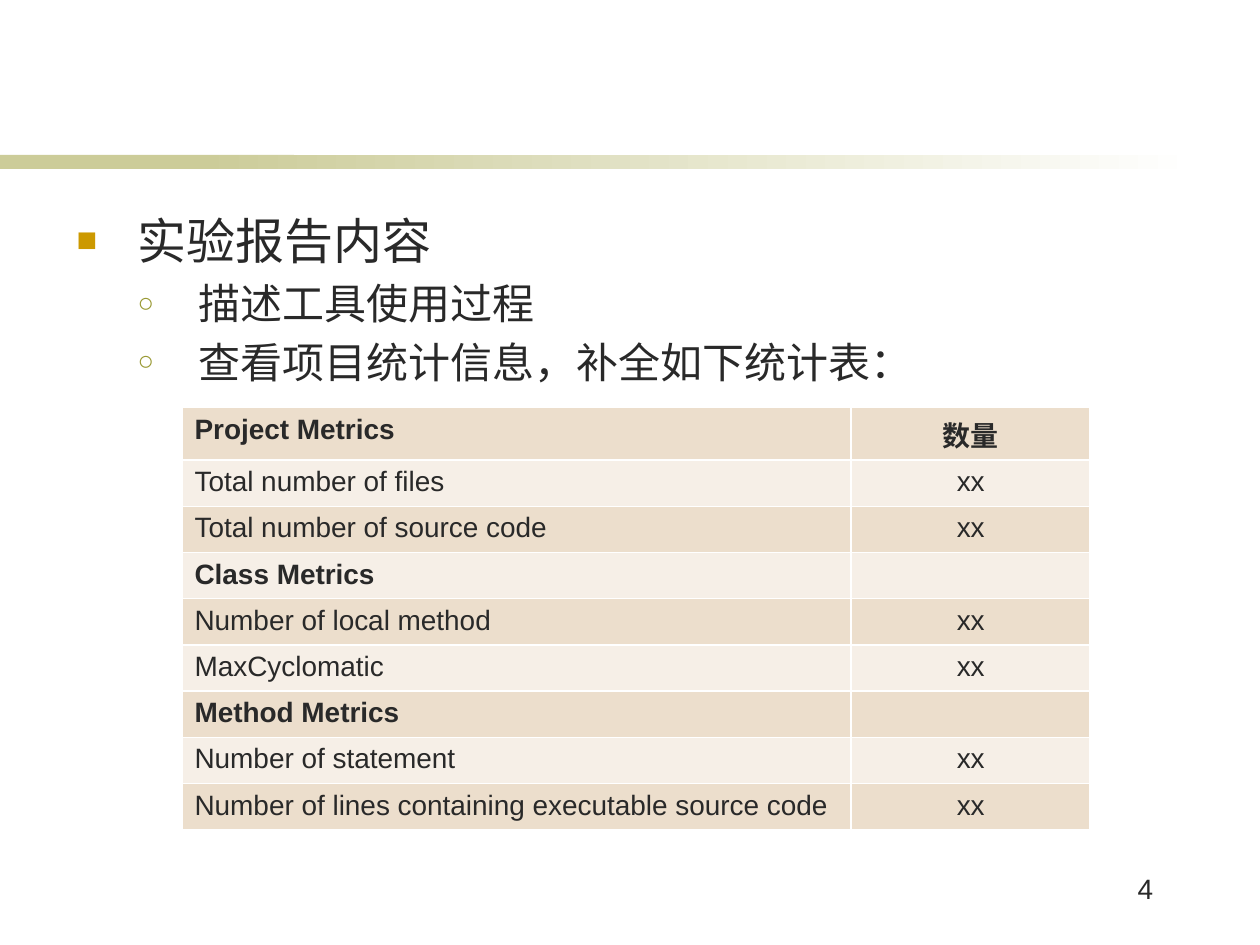
from lxml import etree
from pptx import Presentation
from pptx.dml.color import RGBColor
from pptx.enum import shapes, text
from pptx.oxml import ns
from pptx.util import Pt

INK = RGBColor(0x29, 0x29, 0x29)
WHITE = RGBColor(0xFF, 0xFF, 0xFF)
OLIVE = RGBColor(0xCC, 0xCC, 0x99)
DARK_OLIVE = RGBColor(0x99, 0x99, 0x33)
GOLD = RGBColor(0xCC, 0x99, 0x00)
BANDS = RGBColor(0xEC, 0xDE, 0xCC), RGBColor(0xF6, 0xEF, 0xE7)

LEFT, CENTER, RIGHT = text.PP_ALIGN.LEFT, text.PP_ALIGN.CENTER, text.PP_ALIGN.RIGHT

# text, level, size, bullet, bullet colour, bullet size in percent
OUTLINE = [
    ("实验报告内容", 0, 28, "■", GOLD, 70),
    ("描述工具使用过程", 1, 24, "○", DARK_OLIVE, 65),
    ("查看项目统计信息，补全如下统计表：", 1, 24, "○", DARK_OLIVE, 65),
]
# name, value, bold
METRICS = [
    ("Project Metrics", "数量", True),
    ("Total number of files", "xx", False),
    ("Total number of source code", "xx", False),
    ("Class Metrics", "", True),
    ("Number of local method", "xx", False),
    ("MaxCyclomatic", "xx", False),
    ("Method Metrics", "", True),
    ("Number of statement", "xx", False),
    ("Number of lines containing executable source code", "xx", False),
]


def add(parent, tag, **attrs):
    return etree.SubElement(parent, ns.qn(tag), attrs)


class Deck:
    font = "Arial"

    def __init__(self, slide):
        self.s = slide

    def set_text(self, p, words, size, align=LEFT, bold=False):
        p.text = words
        p.alignment = align
        f = p.font
        f.name, f.size, f.bold = self.font, Pt(size), bold
        f.color.rgb = INK

    def bar(self, x, y, w, h, color, fade_to=None):
        sp = self.s.shapes.add_shape(shapes.MSO_SHAPE.RECTANGLE, Pt(x), Pt(y), Pt(w), Pt(h))
        sp.shadow.inherit = False
        sp.line.fill.background()
        if fade_to is None:
            sp.fill.solid()
            sp.fill.fore_color.rgb = color
        else:
            sp.fill.gradient()
            sp.fill.gradient_angle = 0
            for stop, rgb in zip(sp.fill.gradient_stops, (color, fade_to)):
                stop.color.rgb = rgb

    def box(self, x, y, w, h):
        tf = self.s.shapes.add_textbox(Pt(x), Pt(y), Pt(w), Pt(h)).text_frame
        tf.word_wrap = True
        return tf

    def label(self, x, y, w, h, words, size, align):
        self.set_text(self.box(x, y, w, h).paragraphs[0], words, size, align)

    def outline(self, x, y, w, h, items, indent):
        tf = self.box(x, y, w, h)
        for i, (words, level, size, bullet, color, percent) in enumerate(items):
            p = tf.add_paragraph() if i else tf.paragraphs[0]
            if i:
                p.space_before = Pt(size * 0.2)
            p.level = level
            pPr = p._p.get_or_add_pPr()
            pPr.set("marL", str(Pt(indent * (level + 1))))
            pPr.set("indent", str(Pt(-indent)))
            add(add(pPr, "a:buClr"), "a:srgbClr", val=str(color))
            add(pPr, "a:buSzPct", val=str(percent * 1000))
            add(pPr, "a:buFont", typeface=self.font)
            add(pPr, "a:buChar", char=bullet)
            self.set_text(p, words, size)

    def border(self, cell, color, width):
        tcPr = cell._tc.get_or_add_tcPr()
        for side in ("a:lnL", "a:lnR", "a:lnT", "a:lnB"):
            ln = add(tcPr, side, w=str(Pt(width)))
            add(add(ln, "a:solidFill"), "a:srgbClr", val=str(color))

    def table(self, x, y, widths, heights, rows, size):
        frame = self.s.shapes.add_table(len(rows), len(widths), Pt(x), Pt(y),
                                        Pt(sum(widths)), Pt(sum(heights)))
        tbl = frame.table
        for col, width in zip(tbl.columns, widths):
            col.width = Pt(width)
        for i, (name, value, bold) in enumerate(rows):
            tbl.rows[i].height = Pt(heights[i])
            for cell, words, align in zip(tbl.rows[i].cells, (name, value), (LEFT, CENTER)):
                self.border(cell, WHITE, 1)
                cell.fill.solid()
                cell.fill.fore_color.rgb = BANDS[i % 2]
                if words:
                    self.set_text(cell.text_frame.paragraphs[0], words, size, align, bold)
                else:
                    cell.margin_top = cell.margin_bottom = 0
        # The header's Chinese text sits in the middle of its taller row
        tbl.cell(0, 1).vertical_anchor = text.MSO_ANCHOR.MIDDLE


def main():
    prs = Presentation()
    prs.slide_width, prs.slide_height = Pt(720), Pt(540)
    deck = Deck(prs.slides.add_slide(prs.slide_layouts[6]))
    deck.bar(0, 88.5, 168, 8, OLIVE)
    deck.bar(114, 88.5, 570, 8, OLIVE, fade_to=WHITE)
    deck.outline(36.7, 116.6, 641, 345.6, OUTLINE, 34.8)
    deck.label(592.5, 494.6, 73.5, 36, "4", 16, RIGHT)
    deck.table(104, 232.9, [382.4, 136.6], [30] + [25.85] * 8, METRICS, 16)
    prs.save("out.pptx")


if __name__ == "__main__":
    main()
